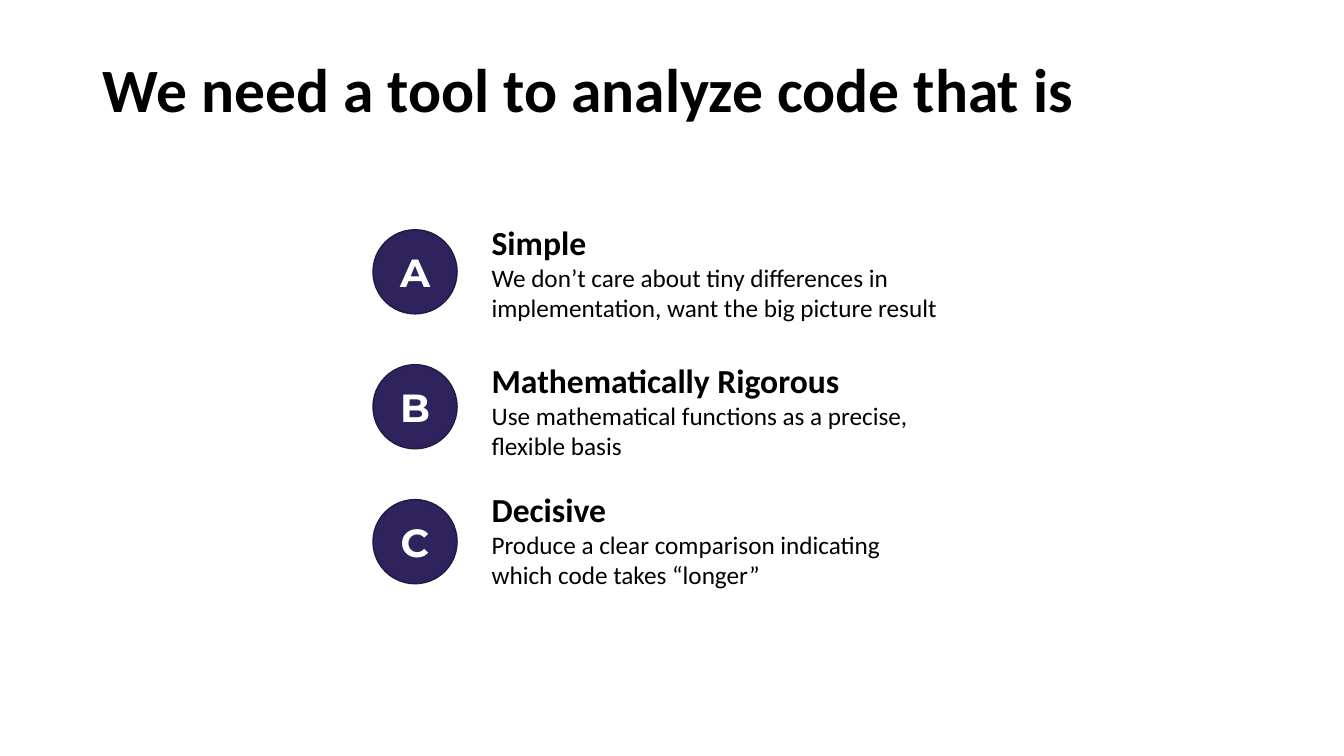
import pptx
import pptx.util
import pptx.dml.color
import pptx.enum.shapes
import pptx.enum.text

Cm = pptx.util.Cm
Pt = pptx.util.Pt
RGBColor = pptx.dml.color.RGBColor
Align = pptx.enum.text.PP_ALIGN
Anchor = pptx.enum.text.MSO_ANCHOR

BLACK = RGBColor(0x00, 0x00, 0x00)
WHITE = RGBColor(0xFF, 0xFF, 0xFF)
PURPLE = RGBColor(0x2E, 0x23, 0x5D)
BORDER = RGBColor(0x22, 0x1A, 0x45)

GOALS = [
    ("A", 5.46, "Simple",
     "We don’t care about tiny differences in implementation, want the big picture result"),
    ("B", 8.94, "Mathematically Rigorous",
     "Use mathematical functions as a precise, flexible basis"),
    ("C", 12.19, "Decisive",
     "Produce a clear comparison indicating which code takes “longer”"),
]
BADGE_TOP = 5.79
BADGE_STEP = 3.4


def style(line, size, bold=True, color=BLACK, face="Calibri"):
    for run in line.runs:
        run.font.name = face
        run.font.size = Pt(size)
        run.font.bold = bold
        run.font.color.rgb = color


def set_title(slide, text):
    title = slide.shapes.title
    title.left, title.top = Cm(2.34), Cm(1.27)
    title.width, title.height = Cm(29.21), Cm(2.11)
    frame = title.text_frame
    frame.text = text
    frame.vertical_anchor = Anchor.MIDDLE
    line = frame.paragraphs[0]
    line.alignment = Align.LEFT
    line.line_spacing = 0.9
    style(line, 44)


def add_badge(slide, top, letter):
    badge = slide.shapes.add_shape(
        pptx.enum.shapes.MSO_SHAPE.OVAL, Cm(9.4), Cm(top), Cm(2.12), Cm(2.12))
    badge.shadow.inherit = False
    badge.fill.solid()
    badge.fill.fore_color.rgb = PURPLE
    badge.line.color.rgb = BORDER
    badge.line.width = Pt(1)
    frame = badge.text_frame
    frame.text = letter
    frame.vertical_anchor = Anchor.MIDDLE
    line = frame.paragraphs[0]
    line.alignment = Align.CENTER
    style(line, 28, color=WHITE, face="Montserrat")


def add_goal(slide, top, head, body):
    box = slide.shapes.add_textbox(Cm(12.14), Cm(top), Cm(11.84), Cm(2.82))
    frame = box.text_frame
    frame.word_wrap = True
    frame.auto_size = pptx.enum.text.MSO_AUTO_SIZE.SHAPE_TO_FIT_TEXT
    frame.text = head
    style(frame.paragraphs[0], 24)
    line = frame.add_paragraph()
    line.text = body
    style(line, 18, bold=False)


def main():
    deck = pptx.Presentation()
    deck.slide_width, deck.slide_height = Cm(33.87), Cm(19.05)
    slide = deck.slides.add_slide(deck.slide_layouts[5])
    set_title(slide, "We need a tool to analyze code that is")
    for row, (letter, top, head, body) in enumerate(GOALS):
        add_goal(slide, top, head, body)
        add_badge(slide, BADGE_TOP + row * BADGE_STEP, letter)
    deck.save("out.pptx")


if __name__ == "__main__":
    main()
